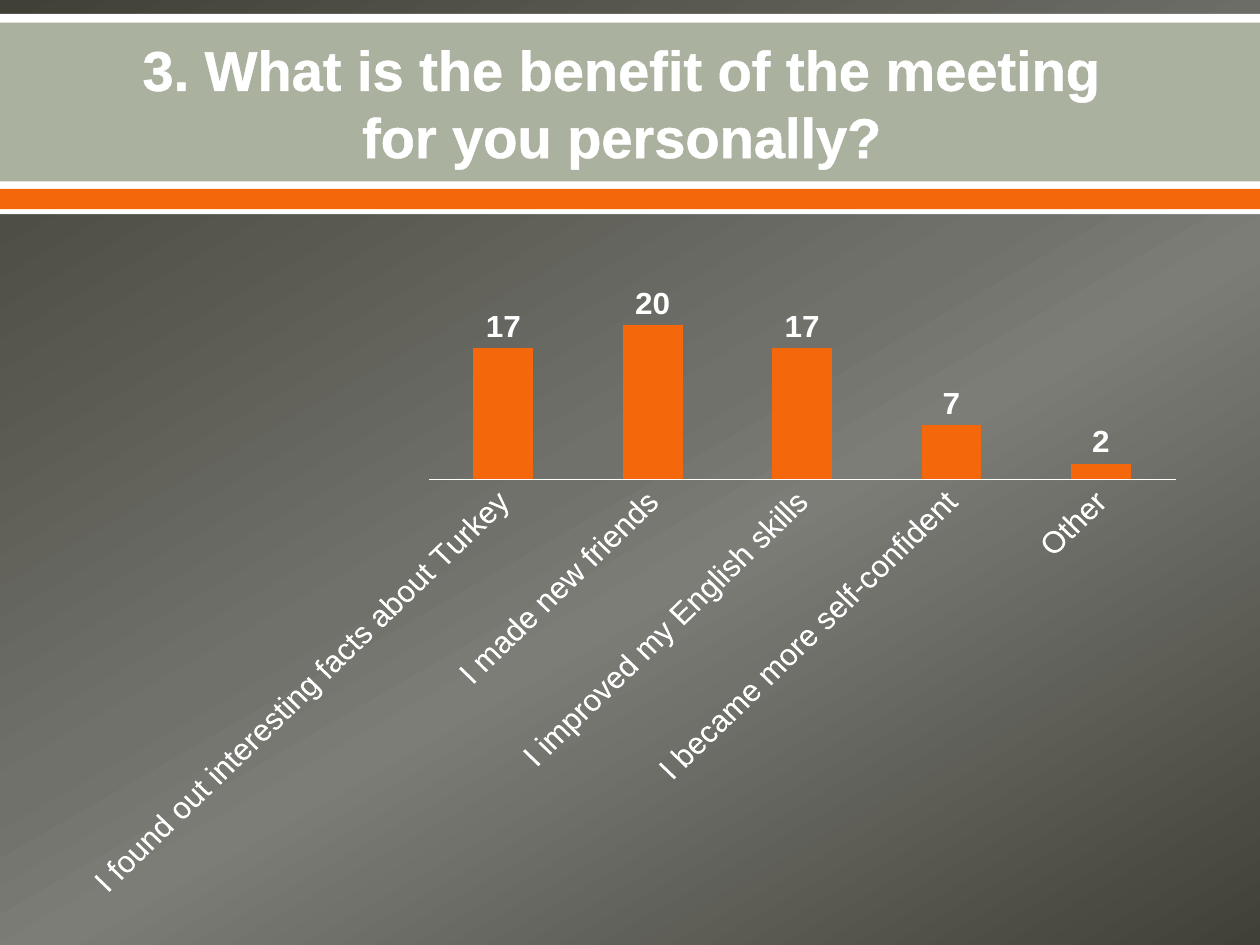
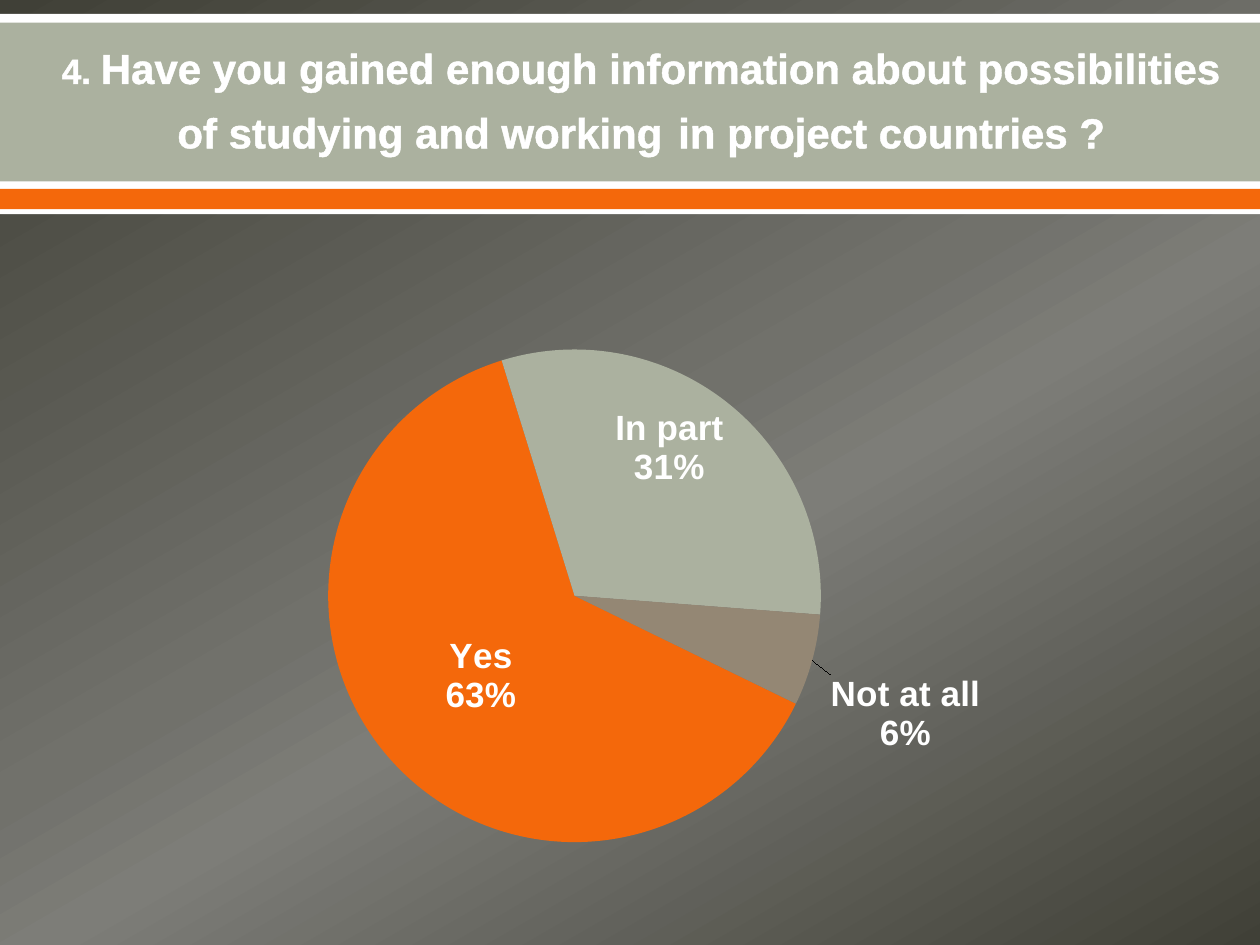
from lxml.etree import SubElement
from pptx import Presentation
from pptx.chart.data import CategoryChartData
from pptx.dml.color import RGBColor
from pptx.enum.chart import XL_CHART_TYPE as CT, XL_LABEL_POSITION as POS, XL_TICK_MARK as TICK
from pptx.enum.shapes import MSO_SHAPE
from pptx.enum.text import MSO_ANCHOR, MSO_AUTO_SIZE, PP_ALIGN
from pptx.oxml import parse_xml
from pptx.oxml.ns import nsdecls, qn
from pptx.util import Inches, Pt

WHITE = RGBColor(0xFF, 0xFF, 0xFF)
SAGE = RGBColor(0xAB, 0xB1, 0x9F)
ORANGE = RGBColor(0xF4, 0x68, 0x0B)
TAUPE = RGBColor(0x94, 0x87, 0x74)
DARK = RGBColor(0x40, 0x40, 0x37)
GREY = RGBColor(0x71, 0x71, 0x6B)
LIGHT = RGBColor(0x7D, 0x7D, 0x78)
FONT = "Arial"

BANDS = [(0.11, 1.59, WHITE), (0.18, 1.26, SAGE), (1.5, 0.16, ORANGE)]

SLIDES = [
    {
        "box": (0.5, 0.2, 9, 1.22),
        "runs": [("3. What is the benefit of the meeting ", 32), None,
                 ("for you personally? ", 32)],
        "type": CT.COLUMN_CLUSTERED,
        "values": {
            "I found out interesting facts about Turkey": 17,
            "I made new friends": 20,
            "I improved my English skills": 17,
            "I became more self-confident": 7,
            "Other": 2,
        },
    },
    {
        "box": (0.21, 0.05, 9.76, 1.5),
        "runs": [("4. ", 20),
                 ("Have you gained enough information about possibilities "
                  "of studying and working", 24),
                 (" ", 32), ("in project countries ?", 24)],
        "type": CT.PIE,
        "values": {"Yes": 63, "In part": 31, "Not at all": 6},
    },
]


def style_font(font, size, bold):
    font.name = FONT
    font.size = Pt(size)
    font.bold = bold
    font.color.rgb = WHITE


def manual_layout(**settings):
    layout = parse_xml(f"<c:layout {nsdecls('c')}><c:manualLayout/></c:layout>")
    for tag, val in settings.items():
        SubElement(layout[0], qn(f"c:{tag}")).set("val", str(val))
    return layout


prs = Presentation()
prs.slide_width = Inches(10)
prs.slide_height = Inches(7.5)

master = prs.slide_master
fill = master.background.fill
fill.gradient()
fill.gradient_angle = 300
stops = next(master._element.iter(qn("a:gsLst")))
for stop in list(stops):
    stops.remove(stop)
for pos, color in [(0, DARK), (48, GREY), (58, LIGHT), (100, DARK)]:
    stop = SubElement(stops, qn("a:gs"), pos=str(pos * 1000))
    SubElement(stop, qn("a:srgbClr"), val=str(color))

charts = []
for content in SLIDES:
    slide = prs.slides.add_slide(prs.slide_layouts[5])
    for top, height, color in BANDS:
        sp = slide.shapes.add_shape(MSO_SHAPE.RECTANGLE, 0, Inches(top),
                                    prs.slide_width, Inches(height))
        sp.shadow.inherit = False
        sp.fill.solid()
        sp.fill.fore_color.rgb = color
        sp.line.fill.background()

    title = slide.shapes.title
    title.left, title.top, title.width, title.height = map(Inches, content["box"])
    slide.shapes._spTree.append(title._element)
    tf = title.text_frame
    tf.word_wrap = True
    tf.auto_size = MSO_AUTO_SIZE.NONE
    tf.vertical_anchor = MSO_ANCHOR.MIDDLE
    p = tf.paragraphs[0]
    p.alignment = PP_ALIGN.CENTER
    for run in content["runs"]:
        if run is None:
            p.add_line_break()
            continue
        r = p.add_run()
        r.text, size = run
        style_font(r.font, size, True)
        r._r.get_or_add_rPr().insert(0, parse_xml(
            f'<a:ln {nsdecls("a")} w="{Pt(1.1)}"><a:solidFill>'
            f'<a:srgbClr val="{WHITE}"/></a:solidFill></a:ln>'))

    data = CategoryChartData()
    data.categories = list(content["values"])
    data.add_series("Series 1", list(content["values"].values()))
    chart = slide.shapes.add_chart(content["type"], Inches(0.51), Inches(2.18),
                                   Inches(9), Inches(4.95), data).chart
    chart.has_legend = False
    chart.has_title = False
    style_font(chart.font, 18, False)
    charts.append(chart)

bars, pie = charts

plot = bars.plots[0]
plot.gap_width = 150
plot.vary_by_categories = False
series = plot.series[0]
series.format.fill.solid()
series.format.fill.fore_color.rgb = ORANGE
labels = series.data_labels
labels.show_value = True
labels.position = POS.OUTSIDE_END
style_font(labels.font, 18, True)
bars.value_axis.visible = False
bars.value_axis.has_major_gridlines = False
bars.value_axis.minimum_scale = 0
axis = bars.category_axis
axis.major_tick_mark = TICK.NONE
axis.format.line.color.rgb = WHITE
style_font(axis.tick_labels.font, 18, False)
axis._element.find(qn("c:txPr")).find(qn("a:bodyPr")).set("rot", str(-45 * 60000))

plot = pie.plots[0]
plot.vary_by_categories = True
SubElement(plot._element, qn("c:firstSliceAng")).set("val", "116")
area = next(pie._chartSpace.iter(qn("c:plotArea")))
for old in area.findall(qn("c:layout")):
    area.remove(old)
area.insert(0, manual_layout(layoutTarget="inner", xMode="edge", yMode="edge",
                             x=0.23, y=0.12, w=0.44, h=0.79))
series = plot.series[0]
labels = series.data_labels
labels.show_value = False
labels.show_percentage = True
labels.show_category_name = True
style_font(labels.font, 20, True)
slices = [(ORANGE, POS.CENTER), (SAGE, POS.INSIDE_END), (TAUPE, POS.OUTSIDE_END)]
for i, (color, position) in enumerate(slices):
    point = series.points[i]
    point.format.fill.solid()
    point.format.fill.fore_color.rgb = color
    point.format.line.fill.background()
    label = point.data_label
    style_font(label.font, 20, True)
    label.position = position
for label in labels._element.findall(qn("c:dLbl")):
    for tag, val in [("showVal", 0), ("showCatName", 1), ("showPercent", 1)]:
        label.find(qn(f"c:{tag}")).set("val", str(val))
    SubElement(label, qn("c:separator")).text = "\n"
label.insert(1, manual_layout(x=0.01, y=0.02))

prs.save("out.pptx")
